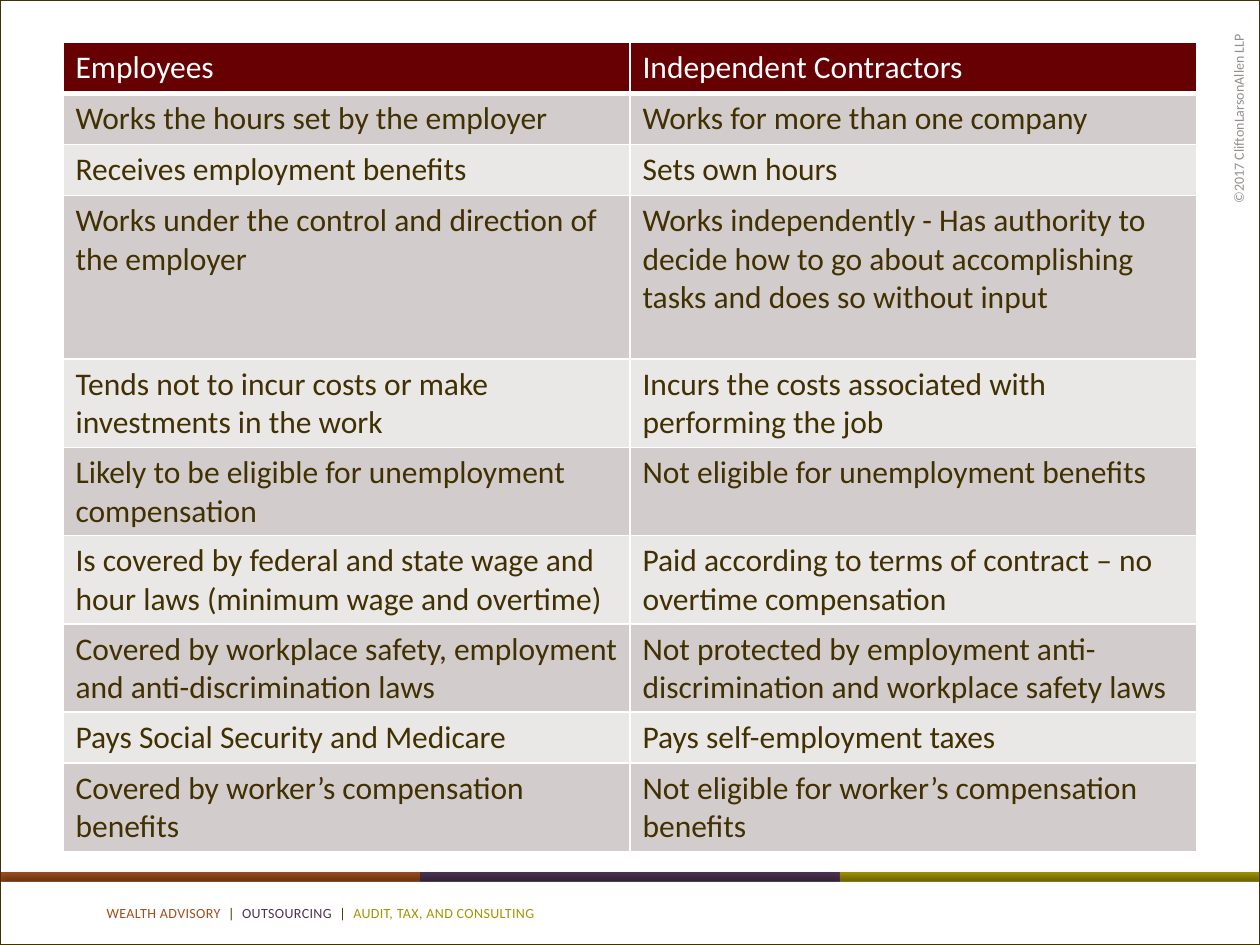
import pptx
import pptx.util
import pptx.dml.color
import pptx.enum.shapes
import pptx.enum.text
import pptx.oxml
import pptx.oxml.ns
from lxml import etree

Cm, Pt = pptx.util.Cm, pptx.util.Pt
RECT = pptx.enum.shapes.MSO_SHAPE.RECTANGLE
ALIGN = pptx.enum.text.PP_ALIGN
ANCHOR = pptx.enum.text.MSO_ANCHOR

FONT = "Calibri"
BROWN, RUST, PLUM, OLIVE = "413000", "A04D1D", "4F3353", "A49400"
WHITE, MAROON, GREY = "FFFFFF", "660003", "938F8C"
BANDS = ["D3CCCC", "EAE7E7"]

SLIDE_W, SLIDE_H = 25.4, 19.05
BAR_TOP, FOOTER_TOP = 17.58, 17.78
COLUMN_W = 11.43
ONE_LINE, TWO_LINES, TALL = 1.03, 1.77, 3.3

ROWS = [
    (ONE_LINE, "Employees", "Independent Contractors"),
    (ONE_LINE, "Works the hours set by the employer", "Works for more than one company"),
    (ONE_LINE, "Receives employment benefits", "Sets own hours"),
    (TALL, "Works under the control and direction of the employer",
     "Works independently - Has authority to decide how to go about "
     "accomplishing tasks and does so without input"),
    (TWO_LINES, "Tends not to incur costs or make investments in the work",
     "Incurs the costs associated with performing the job"),
    (TWO_LINES, "Likely to be eligible for unemployment compensation",
     "Not eligible for unemployment benefits"),
    (TWO_LINES, "Is covered by federal and state wage and hour laws (minimum wage and overtime)",
     "Paid according to terms of contract – no overtime compensation"),
    (TWO_LINES, "Covered by workplace safety, employment and anti-discrimination laws",
     "Not protected by employment anti-discrimination and workplace safety laws"),
    (ONE_LINE, "Pays Social Security and Medicare", "Pays self-employment taxes"),
    (TWO_LINES, "Covered by worker’s compensation benefits",
     "Not eligible for worker’s compensation benefits"),
]
SERVICES = [
    ("WEALTH ADVISORY  ", RUST), ("|  ", BROWN),
    ("OUTSOURCING  ", PLUM), ("|  ", BROWN),
    ("AUDIT, TAX, AND CONSULTING", OLIVE),
]
COPYRIGHT = "©2017 CliftonLarsonAllen LLP"


def rgb(value):
    return pptx.dml.color.RGBColor.from_string(value)


def add_text(p, text, size=18, color=BROWN, spacing=None):
    r = p.add_run()
    r.text = text
    r.font.name, r.font.size, r.font.bold = FONT, Pt(size), False
    r.font.color.rgb = rgb(color)
    if spacing is not None:
        r.font._element.set("spc", str(round(spacing * 100)))


def add_rect(left, top, width, height, fill=None, line=None):
    sp = slide.shapes.add_shape(RECT, Cm(left), Cm(top), Cm(width), Cm(height))
    sp.shadow.inherit = False
    if fill:
        sp.fill.solid()
        sp.fill.fore_color.rgb = rgb(fill)
    else:
        sp.fill.background()
    if line:
        sp.line.color.rgb = rgb(line)
        sp.line.width = Pt(0.75)
    else:
        sp.line.fill.background()
    return sp


def add_box(left, top, width, height, anchor=ANCHOR.TOP):
    sp = slide.shapes.add_textbox(Cm(left), Cm(top), Cm(width), Cm(height))
    sp.text_frame.word_wrap = True
    sp.text_frame.vertical_anchor = anchor
    return sp


def cast_shadow_up(sp):
    effects = sp._element.spPr.find(pptx.oxml.ns.qn("a:effectLst"))
    effects.append(pptx.oxml.parse_xml(
        f'<a:outerShdw {pptx.oxml.ns.nsdecls("a")} blurRad="{Pt(4)}" dist="{Pt(3)}" '
        'dir="16200000" algn="b" rotWithShape="0"><a:srgbClr val="000000">'
        '<a:alpha val="34000"/></a:srgbClr></a:outerShdw>'))


def set_borders(cell, bottom=1):
    tcPr = cell._tc.get_or_add_tcPr()
    for side, width in (("L", 1), ("R", 1), ("T", 1), ("B", bottom)):
        ln = etree.SubElement(tcPr, pptx.oxml.ns.qn(f"a:ln{side}"), w=str(Pt(width)))
        fill = etree.SubElement(ln, pptx.oxml.ns.qn("a:solidFill"))
        etree.SubElement(fill, pptx.oxml.ns.qn("a:srgbClr"), val=WHITE)


prs = pptx.Presentation()
prs.slide_width, prs.slide_height = Cm(SLIDE_W), Cm(SLIDE_H)
slide = prs.slides.add_slide(prs.slide_layouts[6])

# Footer stripe and slide frame
bar_w = SLIDE_W / 3
for i, color in enumerate((RUST, PLUM, OLIVE)):
    add_rect(i * bar_w, BAR_TOP, bar_w, FOOTER_TOP - BAR_TOP, fill=color)
cast_shadow_up(add_rect(0, FOOTER_TOP, SLIDE_W, SLIDE_H - FOOTER_TOP, fill=WHITE))
add_rect(0, 0, SLIDE_W, SLIDE_H, line=BROWN)

# Copyright and service lines
sp = add_box(21.69, 3.28, 6.55, 0.86, anchor=ANCHOR.MIDDLE)
sp.rotation = 270
p = sp.text_frame.paragraphs[0]
p.alignment = ALIGN.RIGHT
add_text(p, COPYRIGHT, size=8, color=GREY)

p = add_box(1.9, 18.11, 10.36, 0.6).text_frame.paragraphs[0]
for text, color in SERVICES:
    add_text(p, text, size=8, color=color, spacing=0.2)

# Comparison table
table = slide.shapes.add_table(
    len(ROWS), 2, Cm(1.27), Cm(0.85), Cm(2 * COLUMN_W),
    Cm(sum(row[0] for row in ROWS))).table
table.horz_banding = False
for column in table.columns:
    column.width = Cm(COLUMN_W)
for i, (height, *texts) in enumerate(ROWS):
    table.rows[i].height = Cm(height)
    header = i == 0
    for j, text in enumerate(texts):
        cell = table.cell(i, j)
        set_borders(cell, bottom=3 if header else 1)
        cell.fill.solid()
        cell.fill.fore_color.rgb = rgb(MAROON if header else BANDS[(i - 1) % 2])
        add_text(cell.text_frame.paragraphs[0], text, color=WHITE if header else BROWN)

prs.save("out.pptx")
